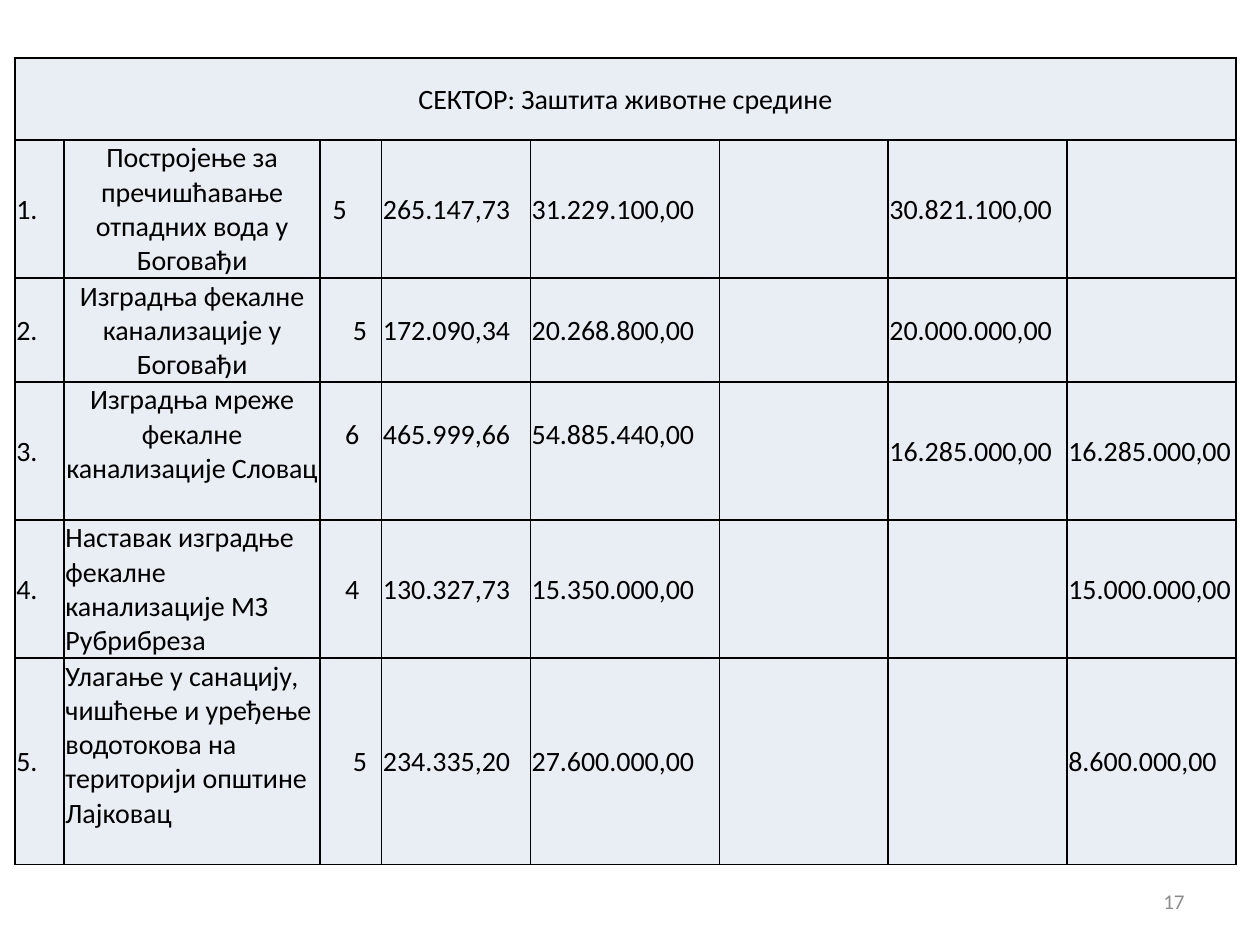
"""Build a slide with the table of environmental protection projects."""
from dataclasses import dataclass

from lxml.etree import SubElement
from pptx import Presentation
from pptx.dml.color import RGBColor
from pptx.enum.text import MSO_ANCHOR as Anchor, PP_ALIGN as Align
from pptx.oxml.ns import qn
from pptx.util import Inches, Pt


@dataclass(frozen=True)
class Theme:
    font: str = "Calibri"
    body: int = 16
    footer: int = 12
    ink: str = "000000"
    muted: str = "8C8C8C"
    fill: str = "E9EDF4"
    rule: int = 1


THEME = Theme()
SECTOR = "СЕКТОР: Заштита животне средине"
PROJECTS = [
    ("1.", "Постројење за пречишћавање отпадних вода у Боговађи",
     "5", "265.147,73", "31.229.100,00", "", "30.821.100,00", ""),
    ("2.", "Изградња фекалне канализације у Боговађи",
     "5", "172.090,34", "20.268.800,00", "", "20.000.000,00", ""),
    ("3.", "Изградња мреже фекалне канализације Словац",
     "6", "465.999,66", "54.885.440,00", "", "16.285.000,00", "16.285.000,00"),
    ("4.", "Наставак изградње фекалне канализације МЗ Рубрибреза",
     "4", "130.327,73", "15.350.000,00", "", "", "15.000.000,00"),
    ("5.", "Улагање у санацију, чишћење и уређење водотокова на територији општине Лајковац",
     "5", "234.335,20", "27.600.000,00", "", "", "8.600.000,00"),
]
PAGE_NUMBER = "17"
COLUMNS = [0.39, 2.03, 0.49, 1.18, 1.5, 1.34, 1.42, 1.34]
ROWS = [0.65, 1.05, 0.79, 1.05, 1.05, 1.57]
NAME, COUNT = 1, 2
COUNT_INDENTS = [0.1, 0.26, 0.2, 0.2, 0.26]
RAISED = {(3, 1), (3, 2), (3, 3), (3, 4), (5, 1)}
INSET, LINE = 0.01, 0.27


def write(frame, text, align, size, color):
    frame.text = text
    para = frame.paragraphs[0]
    para.alignment = align
    for span in para.runs:
        span.font.name = THEME.font
        span.font.size = Pt(size)
        span.font.color.rgb = RGBColor.from_string(color)


def draw_borders(cell):
    properties = cell._tc.get_or_add_tcPr()
    for position, side in enumerate(("lnL", "lnR", "lnT", "lnB")):
        line = SubElement(properties, qn(f"a:{side}"), w=str(Pt(THEME.rule)))
        fill = SubElement(line, qn("a:solidFill"))
        SubElement(fill, qn("a:srgbClr"), val=THEME.ink)
        properties.insert(position, line)


def style_cell(cell, left=INSET, bottom=0):
    cell.fill.solid()
    cell.fill.fore_color.rgb = RGBColor.from_string(THEME.fill)
    cell.vertical_anchor = Anchor.MIDDLE
    cell.margin_left = Inches(left)
    cell.margin_right = cell.margin_top = Inches(INSET)
    cell.margin_bottom = Inches(bottom)
    draw_borders(cell)


def add_projects(page):
    frame = page.shapes.add_table(
        len(ROWS), len(COLUMNS), Inches(0.12), Inches(0.46),
        Inches(sum(COLUMNS)), Inches(sum(ROWS)))
    table = frame.table
    table.first_row = table.horz_banding = False
    for column, width in zip(table.columns, COLUMNS):
        column.width = Inches(width)
    for row, height in zip(table.rows, ROWS):
        row.height = Inches(height)

    for cell in table.rows[0].cells:
        style_cell(cell)
    header = table.cell(0, 0)
    header.merge(table.cell(0, len(COLUMNS) - 1))
    write(header.text_frame, SECTOR, Align.CENTER, THEME.body, THEME.ink)

    for row, project in enumerate(PROJECTS, start=1):
        name_align = Align.CENTER if row <= 3 else Align.LEFT
        for column, text in enumerate(project):
            cell = table.cell(row, column)
            left = COUNT_INDENTS[row - 1] if column == COUNT else INSET
            style_cell(cell, left, LINE if (row, column) in RAISED else 0)
            align = name_align if column == NAME else Align.JUSTIFY
            write(cell.text_frame, text, align, THEME.body, THEME.ink)


def add_page_number(page):
    box = page.shapes.add_textbox(Inches(7.17), Inches(6.95), Inches(2.33), Inches(0.4))
    box.text_frame.word_wrap = True
    box.text_frame.vertical_anchor = Anchor.MIDDLE
    write(box.text_frame, PAGE_NUMBER, Align.RIGHT, THEME.footer, THEME.muted)


def main():
    deck = Presentation()
    deck.slide_width, deck.slide_height = Inches(10), Inches(7.5)
    page = deck.slides.add_slide(deck.slide_layouts[6])
    add_projects(page)
    add_page_number(page)
    deck.save("out.pptx")


if __name__ == "__main__":
    main()
